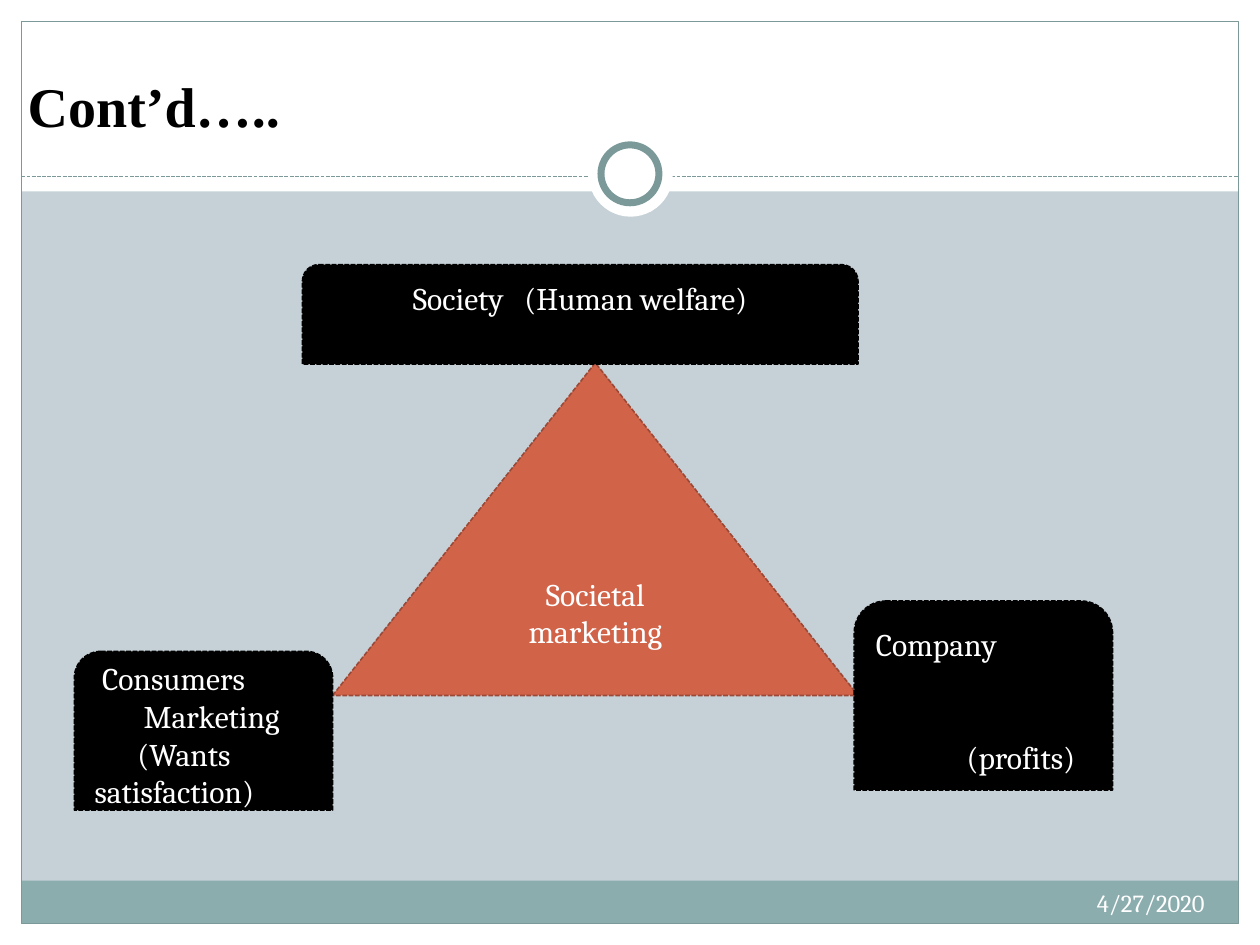
from collections import namedtuple

from lxml import etree
from pptx import Presentation
from pptx import util as u
from pptx.dml.color import RGBColor
from pptx.enum import dml, shapes, text
from pptx.oxml import ns

COLUMNS, ROWS = 10, 7.5
WHITE, BLACK, TEAL = "FFFFFF", "000000", "7C999A"
SHAPE = shapes.MSO_SHAPE
ALIGN = text.PP_ALIGN

Line = namedtuple("Line", "wording indent before align", defaults=(0, 0, ALIGN.LEFT))


class Box(namedtuple("Box", "left top width height")):
    def area(self, left, top, width, height):
        return Box(self.left + left, self.top + top, width, height)

    def emu(self):
        return [u.Inches(length) for length in self]


def colour(value):
    return RGBColor.from_string(value)


def style_line(line, value, width, dashed=False):
    line.color.rgb = colour(value)
    line.width = u.Pt(width)
    if dashed:
        line.dash_style = dml.MSO_LINE.SQUARE_DOT


def add_figure(slide, kind, box, fill=None, line=None, width=0.75, dashed=False):
    figure = slide.shapes.add_shape(kind, *box.emu())
    figure.shadow.inherit = False
    if fill:
        figure.fill.solid()
        figure.fill.fore_color.rgb = colour(fill)
    else:
        figure.fill.background()
    if line:
        style_line(figure.line, line, width, dashed)
    else:
        figure.line.fill.background()
    return figure


def write(frame, lines, size, value=WHITE, face="Cambria", bold=False):
    frame.word_wrap = True
    for index, line in enumerate(lines):
        paragraph = frame.add_paragraph() if index else frame.paragraphs[0]
        paragraph.text = line.wording
        paragraph.alignment = line.align
        paragraph.space_before = u.Pt(line.before)
        font = paragraph.font
        font.name, font.size, font.bold = face, u.Pt(size), bold
        font.color.rgb = colour(value)
        if line.indent:
            paragraph._p.get_or_add_pPr().set("indent", str(u.Inches(line.indent)))


def draw_frame(slide, box):
    margin = 0.17
    inner_width = box.width - 2 * margin
    inner_height = box.height - 2 * margin
    for edge in (
        (0, box.height - margin, box.width, margin),
        (0, 0, box.width, 1.52),
        (0, 0, margin, box.height),
        (box.width - margin, 0, margin, box.height),
    ):
        add_figure(slide, SHAPE.RECTANGLE, box.area(*edge), WHITE)
    add_figure(slide, SHAPE.RECTANGLE, box.area(margin, 6.99, inner_width, 0.34), "8CADAE")
    add_figure(slide, SHAPE.RECTANGLE, box.area(margin, margin, inner_width, inner_height), line=TEAL)

    left, top, width, height = box.area(margin, 1.4, inner_width, 0)
    rule = slide.shapes.add_connector(
        shapes.MSO_CONNECTOR.STRAIGHT,
        u.Inches(left), u.Inches(top), u.Inches(left + width), u.Inches(top + height),
    )
    style_line(rule.line, TEAL, 0.75, True)
    etree.SubElement(rule._element.spPr, ns.qn("a:effectLst"))

    add_figure(slide, SHAPE.OVAL, box.area(4.67, 1.05, 0.67, 0.67), WHITE)
    add_figure(slide, SHAPE.OVAL, box.area(4.77, 1.15, 0.46, 0.46), WHITE, TEAL, 4)


def draw_date(slide, box):
    date = slide.shapes.add_textbox(*box.emu())
    write(date.text_frame, [Line("4/27/2020", align=ALIGN.RIGHT)], 14)


def place_title(slide, box):
    title = slide.shapes.title
    title.left, title.top, title.width, title.height = box.emu()
    title.text_frame.vertical_anchor = text.MSO_ANCHOR.BOTTOM
    write(title.text_frame, [Line("Cont’d…..")], 32, BLACK, "Times New Roman", True)
    slide.shapes.element.append(title.element)


def draw_corner(slide, box, lines):
    corner = add_figure(slide, SHAPE.ROUND_2_SAME_RECTANGLE, box, BLACK, BLACK, 0.9, True)
    corner.text_frame.vertical_anchor = text.MSO_ANCHOR.MIDDLE
    write(corner.text_frame, lines, 18)
    return corner


def draw_triangle(slide, box):
    triangle = add_figure(
        slide, SHAPE.ISOSCELES_TRIANGLE, box.area(2.05, 0.78, 4.17, 2.64),
        "D16349", "9B4936", 0.9, True,
    )
    triangle.text_frame.vertical_anchor = text.MSO_ANCHOR.MIDDLE
    write(triangle.text_frame, [Line("Societal marketing", align=ALIGN.CENTER)], 18)

    draw_corner(slide, box.area(0, 3.07, 2.05, 1.26), [
        Line("Consumers", 0.06),
        Line("Marketing", 0.39),
        Line("(Wants satisfaction)", 0.34),
    ])
    society = draw_corner(slide, box.area(1.81, 0, 4.41, 0.79), [
        Line("Society   (Human welfare)", align=ALIGN.CENTER),
    ])
    society.text_frame.margin_bottom = u.Inches(0.35)
    draw_corner(slide, box.area(6.19, 2.67, 2.05, 1.5), [
        Line("Company"),
        Line("(profits)", 0.72, 43),
    ])


def main():
    deck = Presentation()
    deck.slide_width, deck.slide_height = u.Inches(COLUMNS), u.Inches(ROWS)
    slide = deck.slides.add_slide(deck.slide_layouts[5])
    slide.background.fill.solid()
    slide.background.fill.fore_color.rgb = colour("C5D1D7")
    page = Box(0, 0, COLUMNS, ROWS)
    draw_frame(slide, page)
    draw_date(slide, page.area(6.33, 7, 3.33, 0.4))
    place_title(slide, page.area(0.12, 0.25, 9.69, 0.9))
    draw_triangle(slide, page.area(0.59, 2.1, 8.24, 4.33))
    deck.save("out.pptx")


if __name__ == "__main__":
    main()
